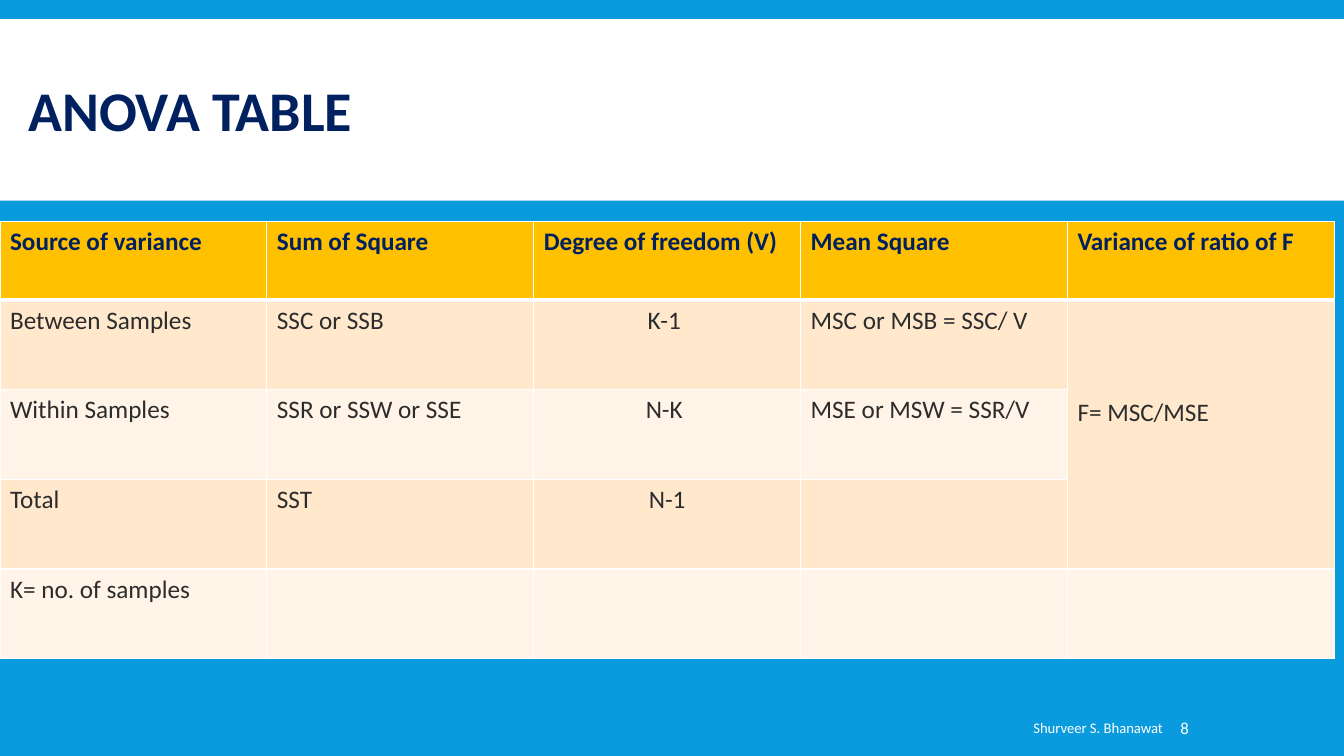
from lxml import etree
from pptx import Presentation
from pptx.dml.color import RGBColor
from pptx.enum.shapes import MSO_SHAPE
from pptx.enum.text import MSO_ANCHOR, PP_ALIGN
from pptx.oxml import parse_xml
from pptx.oxml.ns import nsdecls
from pptx.util import Cm, Pt

RECT = MSO_SHAPE.RECTANGLE
MIDDLE = MSO_ANCHOR.MIDDLE
LEFT, CENTER, RIGHT = PP_ALIGN.LEFT, PP_ALIGN.CENTER, PP_ALIGN.RIGHT
WHITE, NAVY, DARK = "FFFFFF", "002060", "2C2C2C"
BLUE, GOLD = "099BDD", "FFC000"
BANDS = ["FFF4E7", "FFE8CC"]


def rgb(value):
    return RGBColor.from_string(value)


def write(tf, text, size, color, bold=False, align=LEFT):
    """Set the text of a frame and format its only paragraph."""
    tf.text = text
    p = tf.paragraphs[0]
    p.alignment = align
    for r in p.runs:
        r.font.name = "Calibri"
        r.font.size = Pt(size)
        r.font.bold = bold
        r.font.color.rgb = rgb(color)


prs = Presentation()
prs.slide_width, prs.slide_height = Cm(33.87), Cm(19.05)
s = prs.slides.add_slide(prs.slide_layouts[5])
s.background.fill.solid()
s.background.fill.fore_color.rgb = rgb(BLUE)

# Title on a white band
band = s.shapes.add_shape(RECT, 0, Cm(0.48), prs.slide_width, Cm(4.58))
band.shadow.inherit = False
band.fill.solid()
band.fill.fore_color.rgb = rgb(WHITE)
band.line.fill.background()

title = s.shapes.title
title.left, title.top, title.width, title.height = Cm(0.46), Cm(0.79), Cm(30.07), Cm(4.19)
title.text_frame.vertical_anchor = MIDDLE
write(title.text_frame, "ANOVA TABLE", 40, NAVY, bold=True)
title.text_frame.paragraphs[0].line_spacing = 0.85
band._element.addnext(title._element)

# ANOVA table
rows = [
    ["Source of variance", "Sum of Square", "Degree of freedom (V)", "Mean Square",
     "Variance of ratio of F"],
    ["Between Samples", "SSC or SSB", "K-1 ", "MSC or MSB = SSC/ V", "F= MSC/MSE"],
    ["Within Samples", "SSR or SSW or SSE", "N-K ", "MSE or MSW = SSR/V", ""],
    ["Total", "SST", "N-1", "", ""],
    ["K= no. of samples", "", "", "", ""],
]
table = s.shapes.add_table(5, 5, 0, Cm(5.58), Cm(33.63), Cm(11.01)).table
for col in table.columns:
    col.width = Cm(6.725)
for i, row in enumerate(rows):
    header = i == 0
    table.rows[i].height = Cm(1.98 if header else 2.26)
    for j, text in enumerate(row):
        cell = table.cell(i, j)
        cell.fill.solid()
        cell.fill.fore_color.rgb = rgb(GOLD if header else BANDS[i % 2])
        write(cell.text_frame, text, 18, NAVY if header else DARK, header,
              CENTER if j == 2 and not header else LEFT)
        tcPr = cell._tc.get_or_add_tcPr()
        for k, side in enumerate(["lnL", "lnR", "lnT", "lnB"]):
            thick = (header and side == "lnB") or (i == 1 and side == "lnT")
            ln = parse_xml(f'<a:{side} {nsdecls("a")} w="{Pt(3 if thick else 1)}"/>')
            fill = etree.SubElement(ln, ln.tag.replace(side, "solidFill"))
            etree.SubElement(fill, ln.tag.replace(side, "srgbClr"), val=WHITE)
            tcPr.insert(k, ln)

ratio = table.cell(1, 4)
ratio.merge(table.cell(3, 4))
ratio.vertical_anchor = MIDDLE
ratio.margin_bottom = Cm(1.2)

# Footer and slide number
footer = [
    ("Shurveer S. Bhanawat", 15.54, 14.02, 10.5, RIGHT, 0.25),
    ("8", 29.62, 2.62, 12, LEFT, 0.13),
]
for text, left, width, size, align, inset in footer:
    tf = s.shapes.add_textbox(Cm(left), Cm(17.83), Cm(width), Cm(1.02)).text_frame
    tf.word_wrap = True
    tf.vertical_anchor = MIDDLE
    tf.margin_left = Cm(inset)
    write(tf, text, size, WHITE, align=align)

prs.save("out.pptx")
